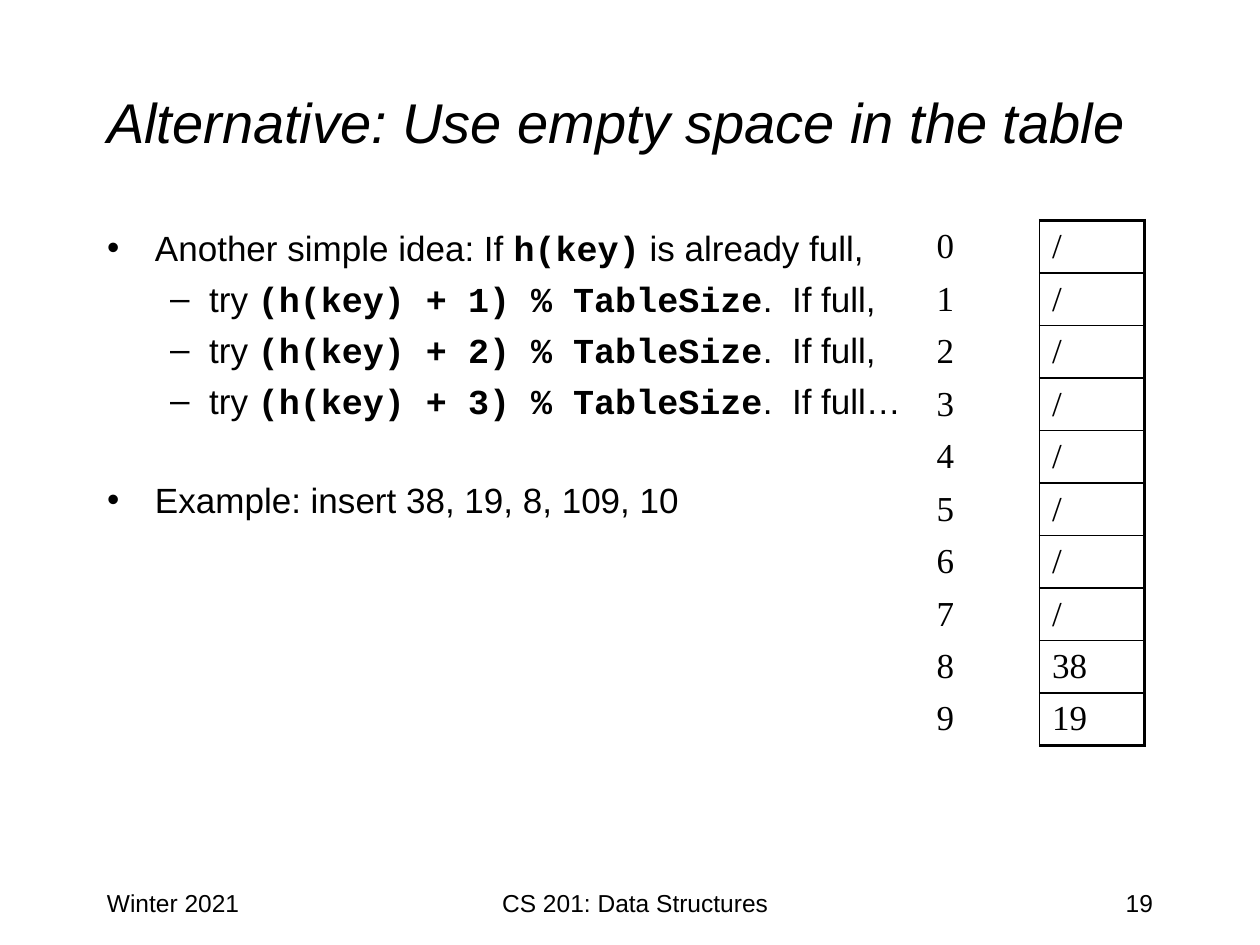
from lxml import etree
from pptx import Presentation
from pptx.dml.color import RGBColor
from pptx.enum.text import MSO_ANCHOR, MSO_AUTO_SIZE, PP_ALIGN
from pptx.oxml.ns import qn
from pptx.util import Inches, Pt

LEFT, CENTER, RIGHT = PP_ALIGN.LEFT, PP_ALIGN.CENTER, PP_ALIGN.RIGHT
TOP, MIDDLE = MSO_ANCHOR.TOP, MSO_ANCHOR.MIDDLE
NO_FIT = MSO_AUTO_SIZE.NONE
UNIT = Inches(1) // 12  # grid step: the slide is 120 columns by 90 rows
BLACK = "000000"
SANS, MONO, SERIF = "Arial", "Courier New", "Times New Roman"


def rgb(value):
    return RGBColor.from_string(value)


def grid(*cells):
    return [c * UNIT for c in cells]


class Deck:
    """Holds the style and the current slide."""

    # bullet, left margin and hanging indent (inches) by list level
    LEVELS = [("•", 0.38, -0.38), ("–", 0.81, -0.31)]
    THIN, THICK = 1, 2.25

    def __init__(self):
        self.prs = Presentation()
        self.prs.slide_width, self.prs.slide_height = grid(120, 90)
        self.s = self.prs.slides.add_slide(self.prs.slide_layouts[1])

    def run(self, p, text, size, font=SANS, bold=False, italic=False):
        r = p.add_run()
        r.text = text
        f = r.font
        f.name, f.size, f.bold, f.italic = font, Pt(size), bold, italic
        f.color.rgb = rgb(BLACK)

    def place(self, sp, box, anchor=TOP):
        sp.left, sp.top, sp.width, sp.height = grid(*box)
        tf = sp.text_frame
        tf.word_wrap, tf.auto_size, tf.vertical_anchor = True, NO_FIT, anchor
        return tf

    def title(self, text, box):
        p = self.place(self.s.shapes.title, box, MIDDLE).paragraphs[0]
        p.alignment = LEFT
        self.run(p, text, 32, italic=True)

    def bullets(self, items, box, size=20):
        """Each item is (level, space before, runs); a run is (text, font)."""
        tf = self.place(self.s.placeholders[1], box)
        for i, (level, space, runs) in enumerate(items):
            p = tf.add_paragraph() if i else tf.paragraphs[0]
            p.level, p.space_before = level, Pt(space)
            char, margin, indent = self.LEVELS[level]
            pPr = p._p.get_or_add_pPr()
            pPr.set("marL", str(Inches(margin)))
            pPr.set("indent", str(Inches(indent)))
            etree.SubElement(pPr, qn("a:buFont"), typeface=SANS)
            etree.SubElement(pPr, qn("a:buChar"), char=char)
            for text, font in runs:
                self.run(p, text, size, font, bold=font == MONO)

    def label(self, text, box, align):
        p = self.place(self.s.shapes.add_textbox(0, 0, 0, 0), box).paragraphs[0]
        p.alignment = align
        self.run(p, text, 14)

    def borders(self, cell, widths):
        tcPr = cell._tc.get_or_add_tcPr()
        for side in "LRTB":
            width = widths.get(side)
            ln = etree.SubElement(tcPr, qn("a:ln" + side), w=str(Pt(width or 0)))
            fill = etree.SubElement(ln, qn("a:solidFill" if width else "a:noFill"))
            if width:
                etree.SubElement(fill, qn("a:srgbClr"), val=BLACK)

    def hash_table(self, values, left, top, cols, row):
        """An index column beside a boxed column of slots."""
        last = len(values) - 1
        box = grid(left, top, sum(cols), row * len(values))
        table = self.s.shapes.add_table(len(values), len(cols), *box).table
        table.first_row = table.horz_banding = False
        for col, width in zip(table.columns, grid(*cols)):
            col.width = width
        for i, value in enumerate(values):
            slot = {"L": self.THIN, "R": self.THICK,
                    "T": self.THIN if i else self.THICK,
                    "B": self.THIN if i < last else self.THICK}
            pairs = [(str(i), {"R": self.THIN}), (value, slot)]
            for j, (text, widths) in enumerate(pairs):
                cell = table.cell(i, j)
                self.borders(cell, widths)
                cell.fill.background()
                cell.vertical_anchor = MIDDLE
                self.run(cell.text_frame.paragraphs[0], text, 20, SERIF)


def main():
    deck = Deck()

    # Title
    deck.title("Alternative: Use empty space in the table", (9, 4, 102, 15))

    # Probing steps and example
    items = [(0, 5, [("Another simple idea: If ", SANS), ("h(key)", MONO),
                     (" is already full,", SANS)])]
    for step, end in enumerate([",", ",", "…"], 1):
        items.append((1, 5, [("try ", SANS),
                             (f"(h(key) + {step}) % TableSize", MONO),
                             (f".  If full{end}", SANS)]))
    items.append((0, 33, [("Example: insert 38, 19, 8, 109, 10", SANS)]))
    deck.bullets(items, (9, 21, 102, 59))

    # Hash table
    deck.hash_table(["/"] * 8 + ["38", "19"], 88, 21, (11, 10), 5)

    # Footer
    deck.label("Winter 2021", (9, 84, 25, 6), LEFT)
    deck.label("CS 201: Data Structures", (38, 84, 45, 6), CENTER)
    deck.label("19", (86, 84, 25, 6), RIGHT)

    deck.prs.save("out.pptx")


if __name__ == "__main__":
    main()
